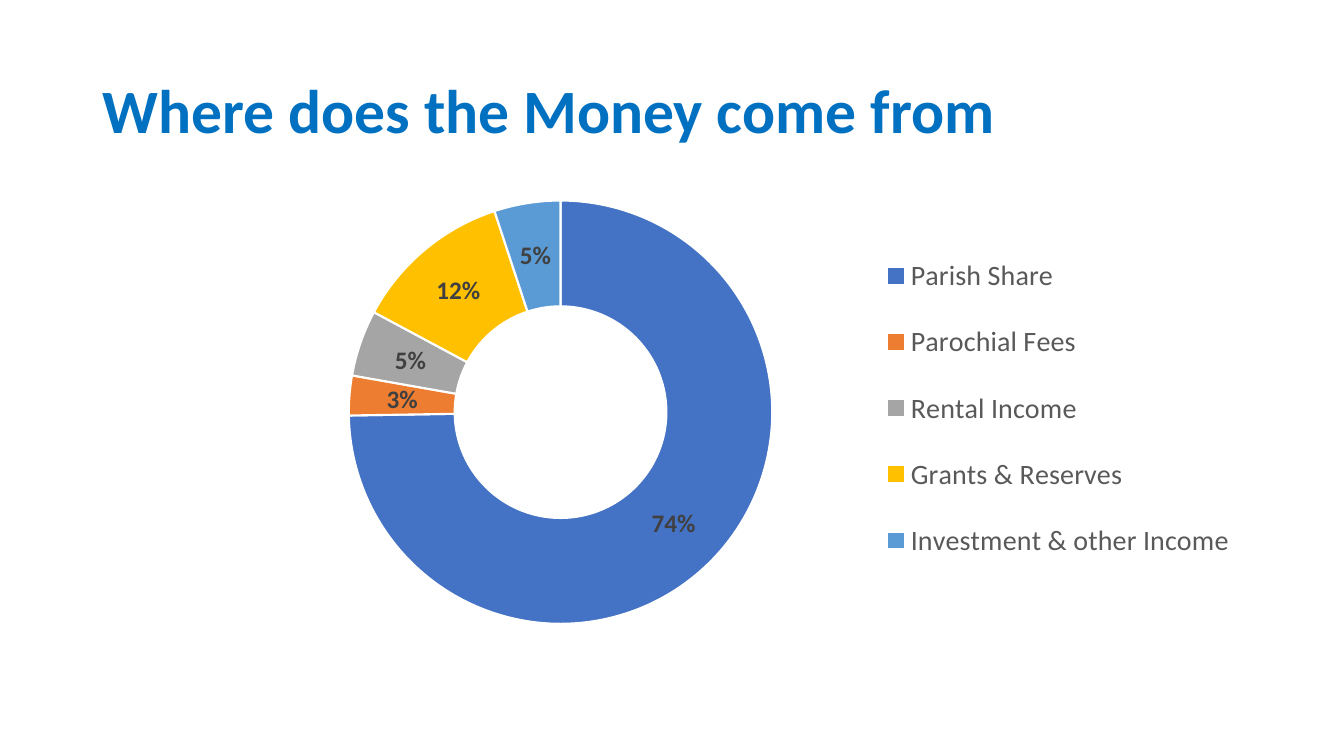
from pptx import Presentation
from pptx.chart.data import CategoryChartData
from pptx.dml.color import RGBColor
from pptx.enum.chart import XL_CHART_TYPE, XL_LEGEND_POSITION
from pptx.enum.text import MSO_ANCHOR
from pptx.oxml import parse_xml
from pptx.oxml.ns import nsdecls, qn
from pptx.util import Inches, Pt

COLOURS = {
    "title": "0070C0",
    "legend": "595959",
    "label": "404040",
    "border": "FFFFFF",
}
INCOME = {
    "Parish Share": (0.74, "4472C4"),
    "Parochial Fees": (0.03, "ED7D31"),
    "Rental Income": (0.05, "A5A5A5"),
    "Grants & Reserves": (0.12, "FFC000"),
    "Investment & other Income": (0.05, "5B9BD5"),
}


class SlideBuilder:
    font_name = "Calibri"

    def __init__(self, page):
        self.page = page

    def style(self, font, colour, **values):
        for name, value in {"name": self.font_name, **values}.items():
            setattr(font, name, value)
        font.color.rgb = RGBColor.from_string(COLOURS[colour])

    def title(self, text, area):
        box = self.page.shapes.add_textbox(*map(Inches, area))
        frame = box.text_frame
        frame.word_wrap = True
        frame.vertical_anchor = MSO_ANCHOR.MIDDLE
        para = frame.paragraphs[0]
        para.line_spacing = 0.9
        span = para.add_run()
        span.text = text
        self.style(span.font, "title", size=Pt(44), bold=True)

    def layout(self, chart_area, part_area, target=""):
        left, top, width, height = chart_area
        x, y, w, h = part_area
        fractions = {
            "x": (x - left) / width,
            "y": (y - top) / height,
            "w": w / width,
            "h": h / height,
        }
        modes = "".join(f'<c:{axis}Mode val="edge"/>' for axis in "xy")
        sizes = "".join(f'<c:{key} val="{value:.4f}"/>' for key, value in fractions.items())
        return parse_xml(
            f'<c:layout {nsdecls("c")}><c:manualLayout>{target}{modes}{sizes}'
            "</c:manualLayout></c:layout>"
        )

    def doughnut(self, income, area, ring_area, legend_area):
        data = CategoryChartData(number_format="0%")
        data.categories = list(income)
        data.add_series("Series 1", [value for value, colour in income.values()])
        frame = self.page.shapes.add_chart(XL_CHART_TYPE.DOUGHNUT, *map(Inches, area), data)
        chart = frame.chart
        chart.has_title = False
        chart.font.name = self.font_name
        chart.font.size = Pt(10)

        chart.has_legend = True
        legend = chart.legend
        legend.position = XL_LEGEND_POSITION.RIGHT
        legend.include_in_layout = False
        self.style(legend.font, "legend", size=Pt(20))
        legend_element = legend._element
        for old in legend_element.findall(qn("c:layout")):
            legend_element.remove(old)
        legend_element.find(qn("c:legendPos")).addnext(self.layout(area, legend_area))

        plot = chart.plots[0]
        plot.vary_by_categories = True
        plot.has_data_labels = True
        labels = plot.data_labels
        label_format = {
            "show_value": True,
            "show_percentage": False,
            "number_format": "0%",
            "number_format_is_linked": False,
        }
        for name, value in label_format.items():
            setattr(labels, name, value)
        self.style(labels.font, "label", size=Pt(18), bold=True)

        for index, (value, colour) in enumerate(income.values()):
            point = plot.series[0].points[index].format
            point.fill.solid()
            point.fill.fore_color.rgb = RGBColor.from_string(colour)
            point.line.color.rgb = RGBColor.from_string(COLOURS["border"])
            point.line.width = Pt(1.5)

        plot_area = chart._chartSpace.chart.plotArea
        for old in plot_area.findall(qn("c:layout")):
            plot_area.remove(old)
        target = '<c:layoutTarget val="inner"/>'
        plot_area.insert(0, self.layout(area, ring_area, target))


def main():
    deck = Presentation()
    deck.slide_width, deck.slide_height = Inches(13.33), Inches(7.5)
    builder = SlideBuilder(deck.slides.add_slide(deck.slide_layouts[6]))
    builder.title("Where does the Money come from", (0.92, 0.4, 11.5, 1.45))
    builder.doughnut(
        INCOME,
        area=(1.82, 1.85, 11.13, 4.48),
        ring_area=(3.46, 1.99, 4.2, 4.2),
        legend_area=(8.7, 2.25, 3.6, 3.6),
    )
    deck.save("out.pptx")


if __name__ == "__main__":
    main()
